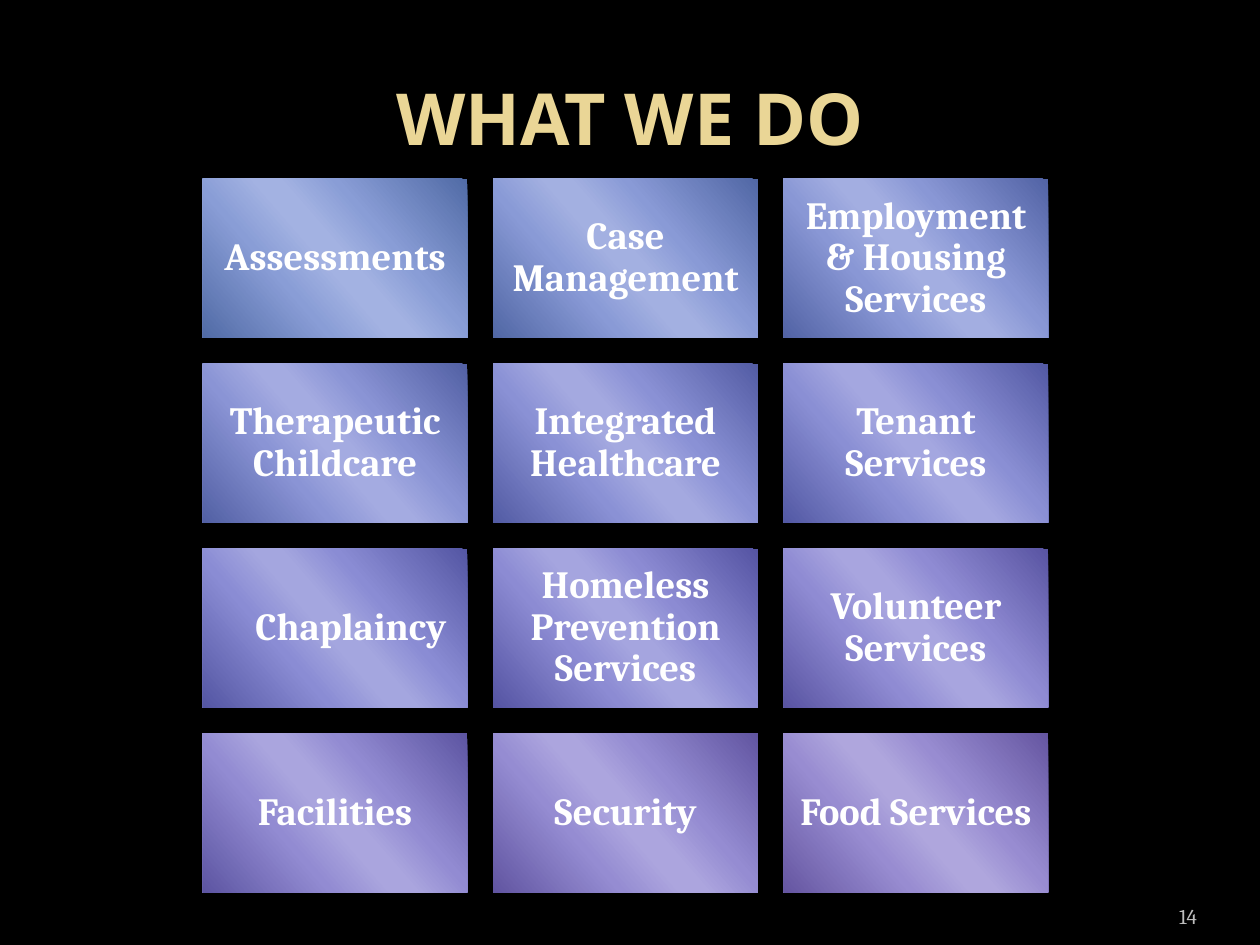
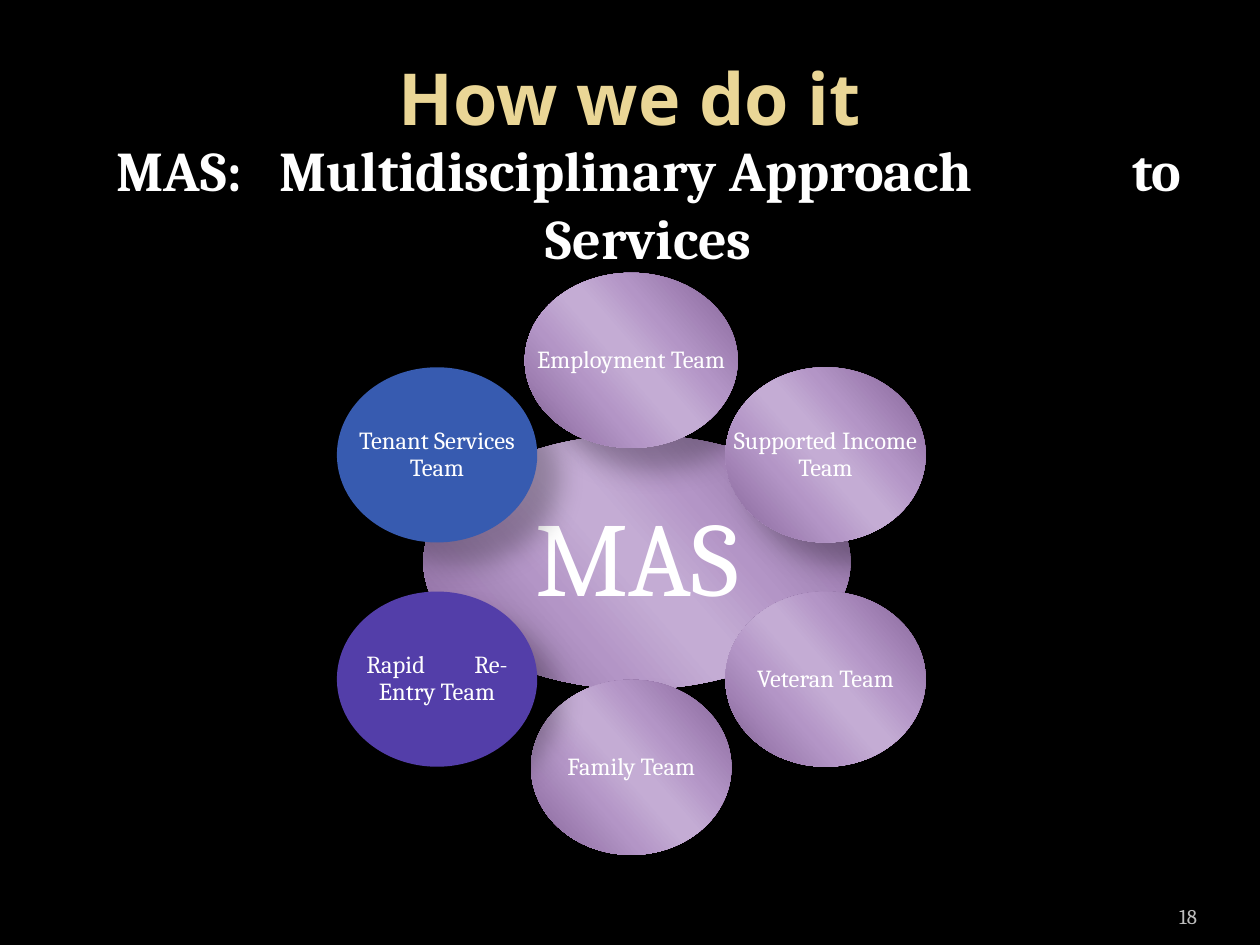
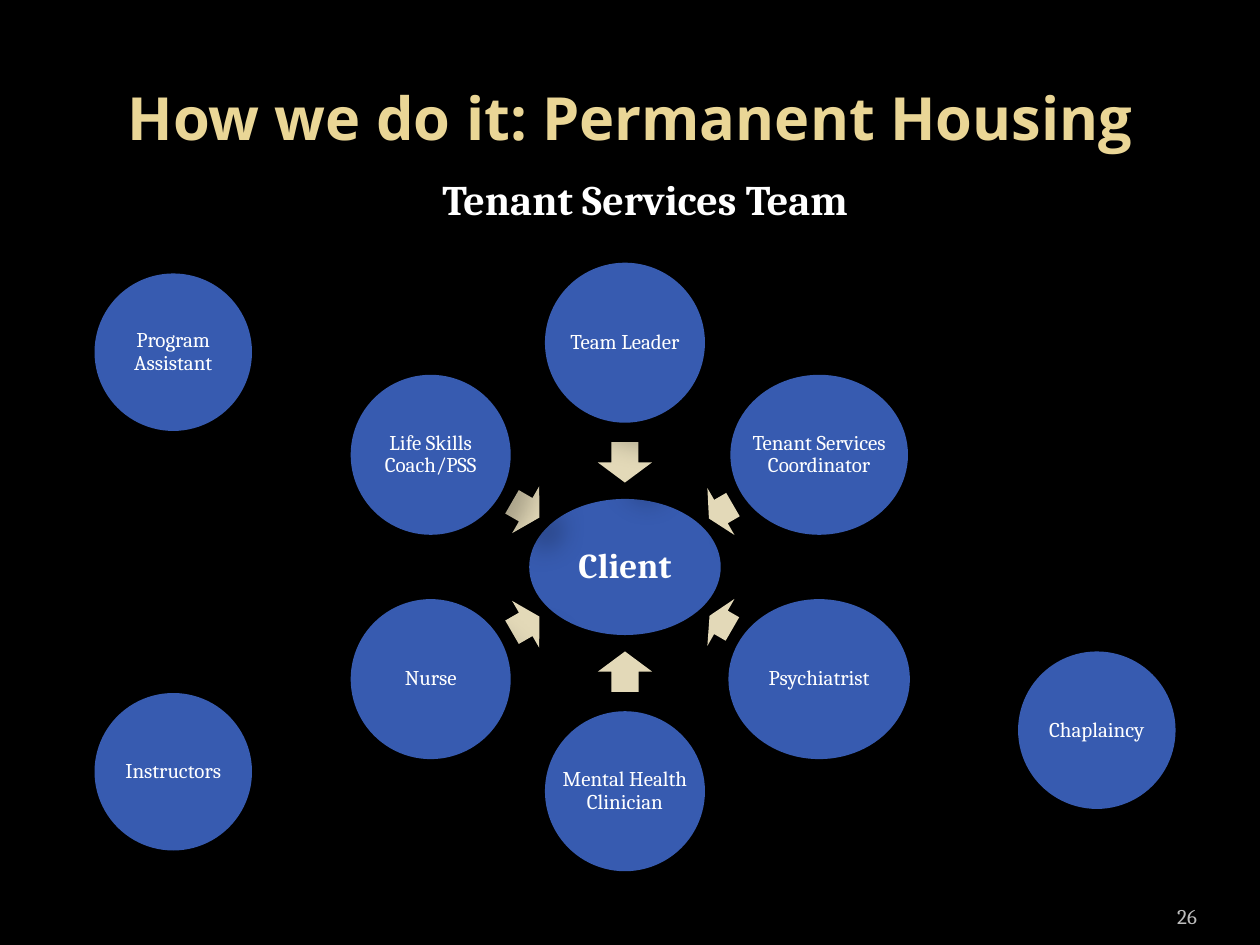
from math import cos, radians, sin

from lxml.etree import SubElement
from pptx import Presentation
from pptx.dml.color import RGBColor
from pptx.enum.shapes import MSO_SHAPE
from pptx.enum.text import MSO_ANCHOR, PP_ALIGN
from pptx.oxml.ns import qn
from pptx.util import Inches, Pt

BLACK, WHITE, GOLD, GRAY = "000000", "FFFFFF", "EAD696", "BDBDBD"
BLUE, VIOLET, SAND = "375BB0", "533EA9", "E3D9B8"
LILAC = ("836196", "B395C6", "C4ACD4")
BODY_FONT, TITLE_FONT = "Cambria", "Open Sans"
SHEEN = ((0, 0), (33, 1), (47, 2), (53, 2), (68, 1), (100, 0))

SERVICES = [
    ("Assessments", ("516BA6", "899DD6", "A3B2E2")),
    ("Case Management", ("5167A5", "899AD6", "A3B0E1")),
    ("Employment & Housing Services", ("5263A5", "8997D5", "A3AEE1")),
    ("Therapeutic Childcare", ("5260A4", "8A94D5", "A4ABE1")),
    ("Integrated Healthcare", ("535CA4", "8A91D5", "A4A9E0")),
    ("Tenant Services", ("5359A4", "8A8FD4", "A4A7E0")),
    ("Chaplaincy", ("5456A3", "8A8CD4", "A4A6DF")),
    ("Homeless Prevention Services", ("5554A3", "8C8BD3", "A5A5DF")),
    ("Volunteer Services", ("5954A2", "8F8BD3", "A8A5DF")),
    ("Facilities", ("5D55A2", "928BD2", "AAA5DE")),
    ("Security", ("6155A1", "958CD2", "ACA5DE")),
    ("Food Services", ("6556A1", "988CD1", "AFA6DD")),
]
INDENTED_SERVICE = "Chaplaincy"

APPROACH = ["MAS:", 14, "Multidisciplinary Approach", 84, "to Services"]
TEAMS = [
    (["Employment Team"], 1.64, 1.69, LILAC),
    (["Supported Income Team"], 1.78, 1.59, LILAC),
    (["Veteran Team"], 1.78, 1.59, LILAC),
    (["Family Team"], 1.59, 1.59, LILAC),
    (["Rapid", 25, "Re-Entry Team"], 1.78, 1.59, VIOLET),
    (["Tenant Services Team"], 1.78, 1.59, BLUE),
]

STAFF = [
    ("Team Leader", 1.27, 0.32, 0.83),
    ("Tenant Services Coordinator", 1.41, 0.22, 0.88),
    ("Psychiatrist", 1.44, 0.21, 0.88),
    ("Mental Health Clinician", 1.27, 0.32, 0.83),
    ("Nurse", 1.27, 0.25, 0.91),
    ("Life Skills Coach/PSS", 1.27, 0.25, 0.91),
]
SUPPORT = [
    ("Program Assistant", 0.75, 2.17),
    ("Chaplaincy", 8.08, 5.17),
    ("Instructors", 0.75, 5.5),
]


def color(value):
    return RGBColor.from_string(value)


def around(center, size):
    return center[0] - size[0] / 2, center[1] - size[1] / 2, *size


def on_ring(center, radius, angle):
    return (center[0] + radius * sin(radians(angle)),
            center[1] - radius * cos(radians(angle)))


def write(shape, pieces, size, fill=WHITE, bold=False, font=BODY_FONT,
          align=PP_ALIGN.CENTER, anchor=MSO_ANCHOR.MIDDLE, spacing=None, insets=None):
    frame = shape.text_frame
    frame.word_wrap = True
    frame.vertical_anchor = anchor
    if insets:
        frame.margin_left = frame.margin_right = Inches(insets[0])
        frame.margin_top = frame.margin_bottom = Inches(insets[1])
    para = frame.paragraphs[0]
    para.alignment = align
    para.line_spacing = spacing
    for piece in pieces:
        span = para.add_run()
        is_gap = not isinstance(piece, str)
        span.text = " " if is_gap else piece
        span.font.size, span.font.bold, span.font.name = Pt(size), bold, font
        span.font.color.rgb = color(fill)
        if is_gap:
            span.font._element.set("spc", str(piece * 100))
    return para


def add_text(page, frame, pieces, size, **style):
    box = page.shapes.add_textbox(*map(Inches, frame))
    write(box, pieces, size, **style)


def add_figure(page, kind, frame, fill):
    shape = page.shapes.add_shape(kind, *map(Inches, frame))
    shape.line.fill.background()
    properties = shape._element.spPr
    if isinstance(fill, str):
        shape.fill.solid()
        shape.fill.fore_color.rgb = color(fill)
    else:
        shape.fill.gradient()
        shape.fill.gradient_angle = 221
        stops = properties.find(qn("a:gradFill")).find(qn("a:gsLst"))
        for stop in list(stops):
            stops.remove(stop)
        for position, tone in SHEEN:
            stop = SubElement(stops, qn("a:gs"), pos=str(position * 1000))
            SubElement(stop, qn("a:srgbClr"), val=fill[tone])
    shape.shadow.inherit = False
    shadow = SubElement(properties.find(qn("a:effectLst")), qn("a:outerShdw"),
                        blurRad=str(Pt(15)), dist=str(Pt(18)), dir="2700000",
                        sy="90000", rotWithShape="0")
    shade = SubElement(shadow, qn("a:srgbClr"), val=BLACK)
    SubElement(shade, qn("a:alpha"), val="25500")
    return shape


def add_circle(page, frame, fill, pieces, size, bold=False, inset=0.02):
    add_figure(page, MSO_SHAPE.OVAL, frame, fill)
    add_text(page, frame, pieces, size, bold=bold, spacing=0.9, insets=(inset, inset))


def add_page(deck, title, number, size=41, height=1.25):
    page = deck.slides.add_slide(deck.slide_layouts[5])
    heading = page.shapes.title
    heading.left, heading.top, heading.width, heading.height = map(
        Inches, (0.5, 0.3, 9, height))
    write(heading, [title], size, fill=GOLD, bold=True, font=TITLE_FONT)
    add_text(page, (8.67, 7.02, 0.83, 0.4), [number], 12, fill=GRAY,
             align=PP_ALIGN.RIGHT, anchor=MSO_ANCHOR.BOTTOM, insets=(0, 0.05))
    return page


def build_services(deck):
    page = add_page(deck, "WHAT WE DO", "14")
    for index, (name, tones) in enumerate(SERVICES):
        row, column = divmod(index, 3)
        frame = (1.61 + column * 2.305, 1.42 + row * 1.467, 2.1, 1.26)
        tile = add_figure(page, MSO_SHAPE.RECTANGLE, frame, tones)
        para = write(tile, [name], 22, bold=True, spacing=0.9, insets=(0.09, 0.09))
        if name == INDENTED_SERVICE:
            layout = para._p.get_or_add_pPr()
            layout.set("marL", str(Inches(0.38)))
            layout.set("indent", str(Inches(-0.13)))


def build_teams(deck):
    page = add_page(deck, "How we do it", "18", height=0.94)
    add_circle(page, (3.36, 3.45, 3.39, 2.02), LILAC, ["MAS"], 60, inset=0.08)
    for index, (pieces, radius, width, fill) in enumerate(TEAMS):
        center = on_ring((5.01, 4.5), radius, index * 60)
        add_circle(page, around(center, (width, 1.39)), fill, pieces, 14)
    add_text(page, (0.61, 1.03, 9.08, 1.18), APPROACH, 32, bold=True,
             anchor=MSO_ANCHOR.TOP)


def build_housing(deck):
    page = add_page(deck, "How we do it: Permanent Housing", "26", size=34)
    hub = (4.96, 4.5)
    add_circle(page, around(hub, (1.52, 1.08)), BLUE, ["Client"], 20, bold=True,
               inset=0.03)
    for index, (name, width, length, distance) in enumerate(STAFF):
        angle = index * 60
        arrow = add_figure(page, MSO_SHAPE.LEFT_ARROW,
                           around(on_ring(hub, distance, angle), (length, 0.43)), SAND)
        arrow.rotation = (270 + angle) % 360
        center = on_ring(hub, 1.78, angle)
        add_circle(page, around(center, (width, 1.27)), BLUE, [name], 12)
    add_text(page, (0.58, 1.33, 9.08, 0.5), ["Tenant Services Team"], 24, bold=True,
             anchor=MSO_ANCHOR.TOP)
    for name, left, top in SUPPORT:
        add_circle(page, (left, top, 1.25, 1.25), BLUE, [name], 12, inset=0.2)


def main():
    deck = Presentation()
    deck.slide_width, deck.slide_height = Inches(10), Inches(7.5)
    backdrop = deck.slide_master.background.fill
    backdrop.solid()
    backdrop.fore_color.rgb = color(BLACK)
    build_services(deck)
    build_teams(deck)
    build_housing(deck)
    deck.save("out.pptx")


if __name__ == "__main__":
    main()
